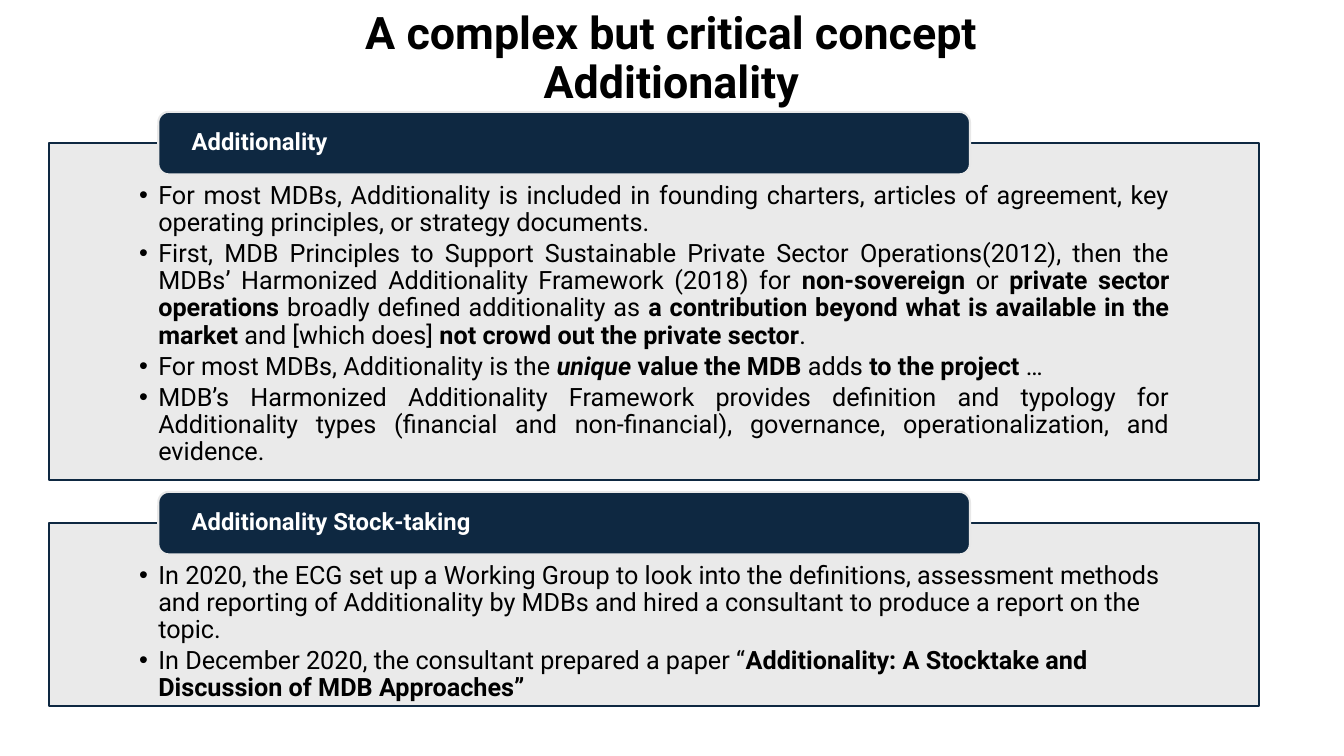
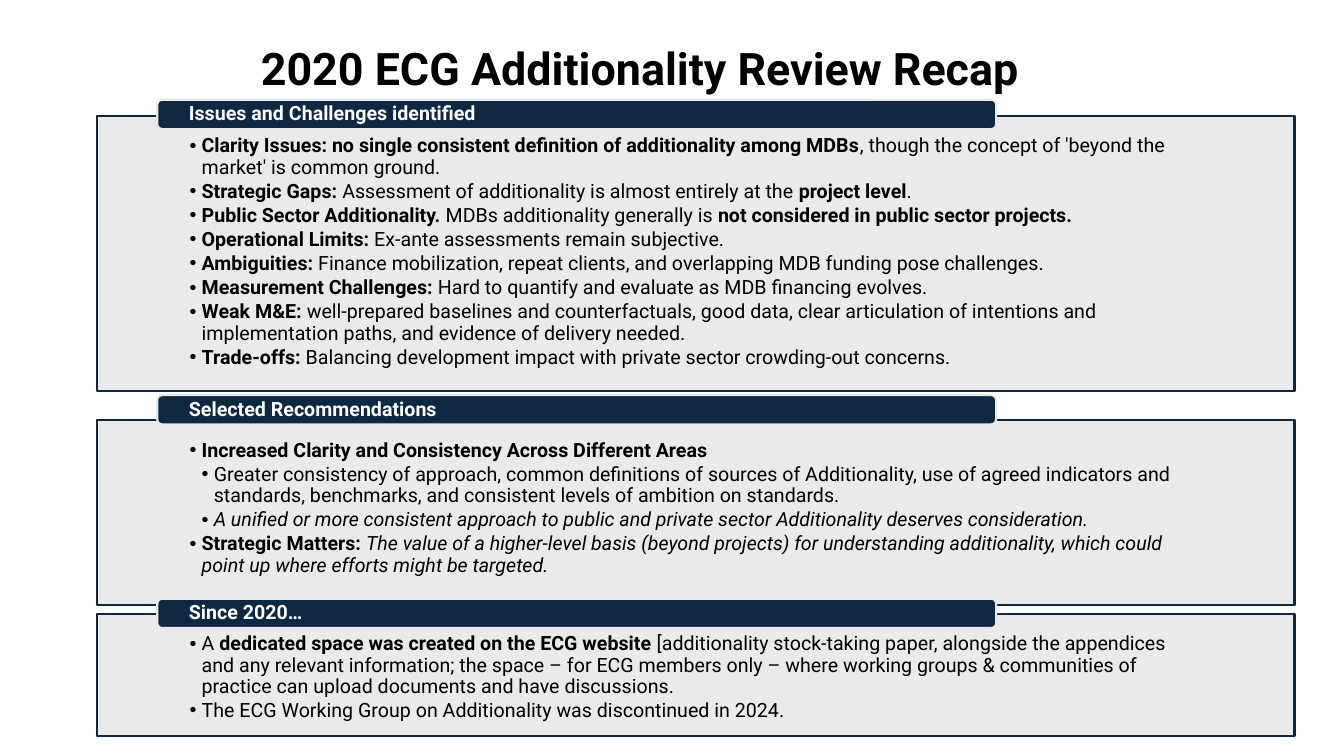
"""Build two slides on additionality: the concept and a review recap."""
from lxml import etree
from pptx import Presentation
from pptx.dml.color import RGBColor
from pptx.enum import shapes, text
from pptx.oxml import ns
from pptx.util import Inches, Pt

HUES = {"navy": "0E2841", "grey": "E8E8E8", "ink": "000000", "white": "FFFFFF"}
FONT = "Roboto"
LEFT, MID, JUST = text.PP_ALIGN.LEFT, text.PP_ALIGN.CENTER, text.PP_ALIGN.JUSTIFY

CONCEPT = [
    (1, [("For most MDBs, Additionality is included in founding charters, articles of agreement, key operating principles, or strategy documents.", "")]),
    (1, [("First, MDB Principles to Support Sustainable Private Sector Operations(2012), then the MDBs’ Harmonized Additionality Framework (2018) for ", ""),
         ("non-sovereign", "b"), (" or ", ""), ("private sector operations ", "b"),
         ("broadly defined additionality as ", ""),
         ("a contribution beyond what is available in the market", "b"),
         (" and [which does] ", ""), ("not crowd out the private sector", "b"), (".", "")]),
    (1, [("For most MDBs, Additionality is the ", ""), ("unique", "bi"),
         (" value the MDB ", "b"), ("adds", ""), (" to the project ", "b"), ("…", "")]),
    (1, [("MDB’s Harmonized Additionality Framework provides definition and typology for Additionality types (financial and non-financial), governance, operationalization, and evidence.", "")]),
]
STOCK = [
    (1, [("In 2020, the ECG set up a Working Group to look into the definitions, assessment methods and reporting of Additionality by MDBs and hired a consultant to produce a report on the topic.", "")]),
    (1, [("In December 2020, the consultant prepared a paper “", ""),
         ("Additionality: A Stocktake and Discussion of MDB Approaches”", "b")]),
]
ISSUES = [
    (1, [("Clarity Issues: no single consistent definition of additionality among MDBs", "b"),
         (", though the concept of 'beyond the market' is common ground.", "")]),
    (1, [("Strategic Gaps: ", "b"), ("Assessment of additionality is almost entirely at the ", ""),
         ("project level", "b"), (".", "")]),
    (1, [("Public Sector Additionality.", "b"), (" MDBs additionality generally is ", ""),
         ("not considered in public sector projects.", "b")]),
    (1, [("Operational Limits:", "b"), (" Ex-ante assessments remain subjective.", "")]),
    (1, [("Ambiguities:", "b"),
         (" Finance mobilization, repeat clients, and overlapping MDB funding pose challenges.", "")]),
    (1, [("Measurement Challenges:", "b"),
         (" Hard to quantify and evaluate as MDB financing evolves.", "")]),
    (1, [("Weak M&E: ", "b"),
         ("well-prepared baselines and counterfactuals, good data, clear articulation of intentions and implementation paths, and evidence of delivery needed.", "")]),
    (1, [("Trade-offs:", "b"),
         (" Balancing development impact with private sector crowding-out concerns.", "")]),
]
ADVICE = [
    (1, [("Increased Clarity and Consistency Across Different Areas", "b")]),
    (2, [("Greater consistency of approach, common definitions of sources of Additionality, use of agreed indicators and standards, benchmarks, and consistent levels of ambition on standards.", "")]),
    (2, [("A unified or more consistent approach to public and private sector Additionality deserves consideration.", "i")]),
    (1, [("Strategic Matters: ", "b"),
         ("The value of a higher-level basis (beyond projects) for understanding additionality, which could point up where efforts might be targeted.", "i")]),
]
SINCE = [
    (1, [("A ", ""), ("dedicated space was created on the ECG website", "b"),
         (" [additionality stock-taking paper, alongside the appendices and any relevant information; the space – for ECG members only – where working groups & communities of practice can upload documents and have discussions.", "")]),
    (1, [("The ECG Working Group on Additionality was discontinued in 2024.", "")]),
]

SLIDES = [
    {"title": ["A complex but critical concept", "Additionality"],
     "at": (0.91, -0.03), "drop": 0.05,
     "x": 0.49, "wide": 12, "pad": (0.89, 0.39, 0.89, 0.13), "size": 18, "step": 0.19,
     "tab": (1.57, 8.05, 0.62), "head": 17,
     "panels": [("Additionality", 1.42, 3.34, 1.11, JUST, CONCEPT),
                ("Additionality Stock-taking", 5.19, 1.81, 4.88, LEFT, STOCK)]},
    {"title": ["2020 ECG Additionality Review Recap"],
     "at": (0.6, -0.12), "drop": 0.46,
     "x": 0.96, "wide": 11.88, "pad": (0.92, 0.2, 0.92, 0.11), "size": 14, "step": 0.12,
     "tab": (1.56, 8.32, 0.29), "head": 14,
     "panels": [("Issues and Challenges identified", 1.15, 2.73, 0.99, LEFT, ISSUES),
                ("Selected Recommendations", 4.17, 1.83, 3.92, LEFT, ADVICE),
                ("Since 2020…", 6.09, 1.21, 5.94, LEFT, SINCE)]},
]


def hue(name):
    return RGBColor.from_string(HUES[name])


def frame(shape, pad, anchor):
    body = shape.text_frame
    body.word_wrap = True
    body.vertical_anchor = anchor
    body.margin_left, body.margin_top, body.margin_right, body.margin_bottom = map(Inches, pad)
    return body


def write(para, words, size, style="", ink="ink"):
    run = para.add_run()
    run.text = words
    font = run.font
    font.name, font.size = FONT, Pt(size)
    font.bold, font.italic = "b" in style, "i" in style
    font.color.rgb = hue(ink)


def block(slide, kind, at, fill, line):
    shape = slide.shapes.add_shape(kind, *map(Inches, at))
    shape.shadow.inherit = False
    shape.fill.solid()
    shape.fill.fore_color.rgb = hue(fill)
    shape.line.color.rgb = hue(line)
    shape.line.width = Pt(1.5)
    return shape


def fade(shape, share):
    tint = shape.fill._xPr.find(ns.qn("a:solidFill"))[0]
    etree.SubElement(tint, ns.qn("a:alpha")).set("val", str(share * 1000))


def bullet(para, level, step):
    props = para._p.get_or_add_pPr()
    props.set("marL", str(Inches(level * step)))
    props.set("indent", str(-Inches(step)))
    etree.SubElement(props, ns.qn("a:buFont")).set("typeface", "Arial")
    etree.SubElement(props, ns.qn("a:buChar")).set("char", "•")


def head(slide, deck):
    box = slide.shapes.add_textbox(*map(Inches, (*deck["at"], 11.5, 1.24)))
    body = frame(box, (0.1, deck["drop"], 0.1, 0.05), text.MSO_ANCHOR.MIDDLE)
    para = body.paragraphs[0]
    para.alignment, para.line_spacing = MID, 0.9
    for i, words in enumerate(deck["title"]):
        if i:
            para.add_line_break()
        write(para, words, 32, "b")


def panel(slide, deck, label, top, high, rise, align, items):
    box = block(slide, shapes.MSO_SHAPE.RECTANGLE,
                (deck["x"], top, deck["wide"], high), "grey", "navy")
    fade(box, 90)
    body = frame(box, deck["pad"], text.MSO_ANCHOR.TOP)
    for i, (level, runs) in enumerate(items):
        para = body.add_paragraph() if i else body.paragraphs[0]
        para.alignment, para.line_spacing = align, 0.9
        para.space_after = Pt(0.15 * deck["size"])
        bullet(para, level, deck["step"])
        for words, style in runs:
            write(para, words, deck["size"], style)

    left, wide, tall = deck["tab"]
    tab = block(slide, shapes.MSO_SHAPE.ROUNDED_RECTANGLE,
                (left, rise, wide, tall), "navy", "grey")
    para = frame(tab, (0.3, 0, 0.3, 0), text.MSO_ANCHOR.MIDDLE).paragraphs[0]
    para.alignment, para.line_spacing = LEFT, 0.9
    write(para, label, deck["head"], "b", "white")


def main():
    show = Presentation()
    show.slide_width, show.slide_height = Inches(13.33), Inches(7.5)
    for deck in SLIDES:
        slide = show.slides.add_slide(show.slide_layouts[6])
        head(slide, deck)
        for part in deck["panels"]:
            panel(slide, deck, *part)
    show.save("out.pptx")


if __name__ == "__main__":
    main()
